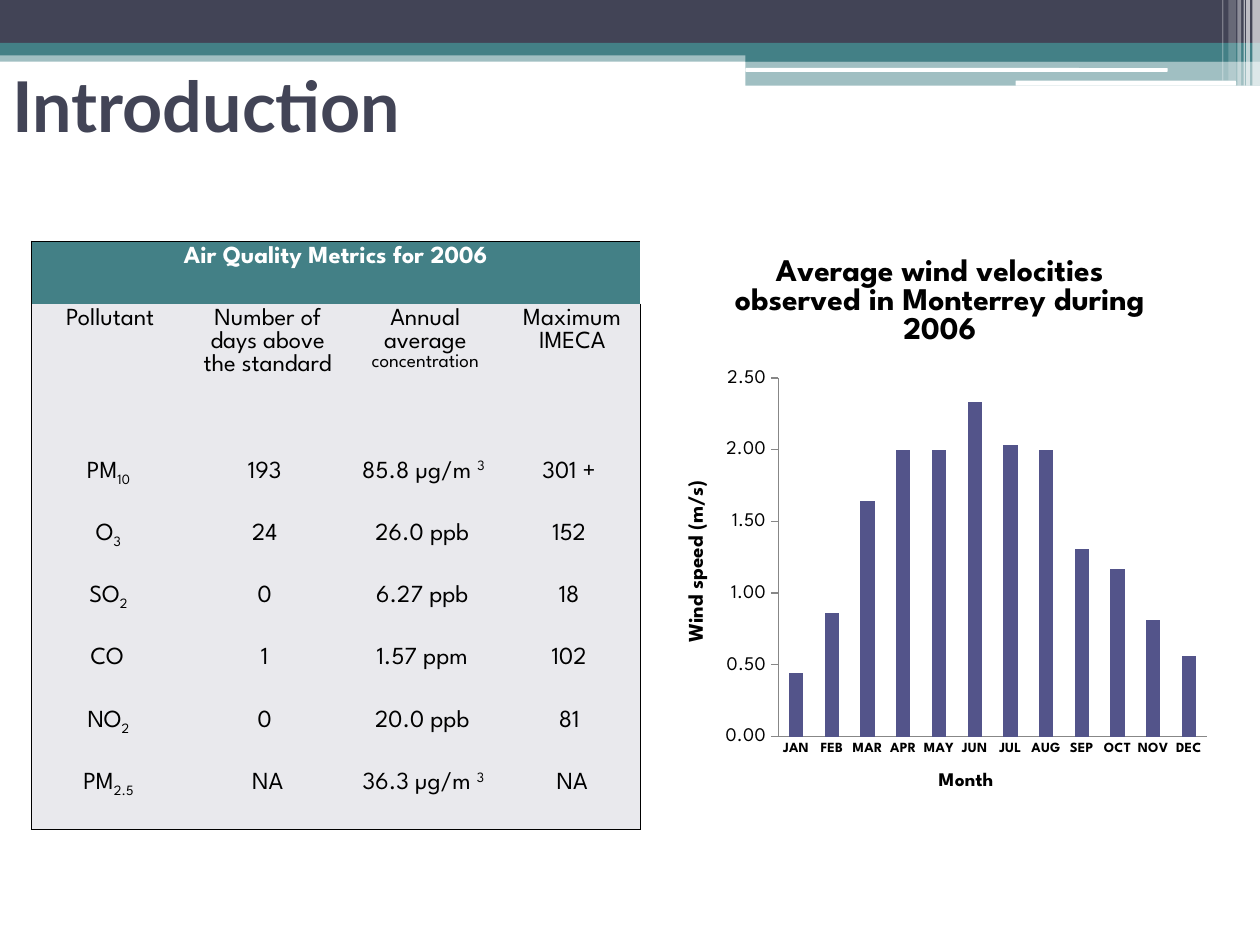
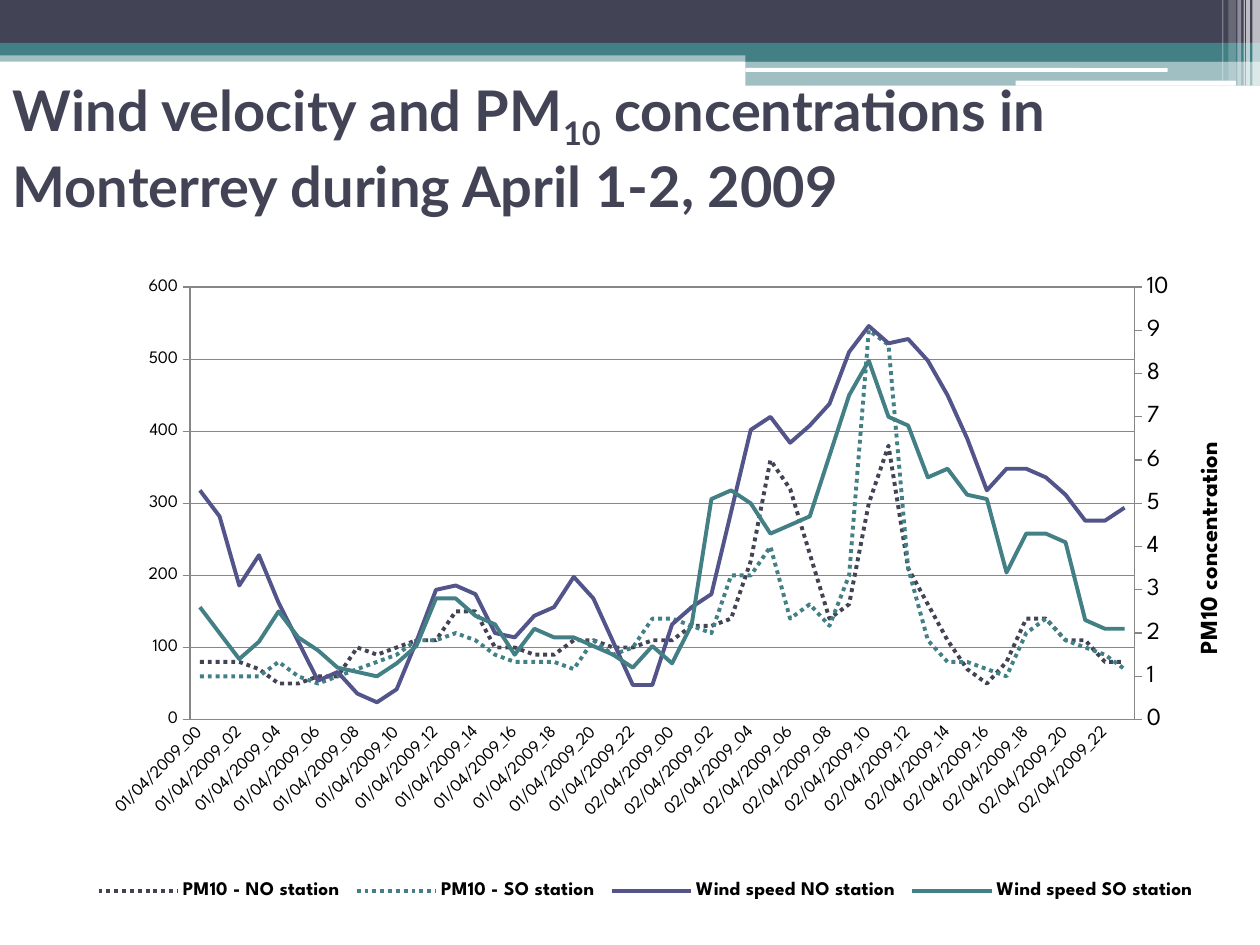
import copy
from typing import NamedTuple, Optional

import pptx
import pptx.chart.axis
import pptx.chart.data
import pptx.dml.color
import pptx.enum.chart
import pptx.enum.dml
import pptx.enum.shapes
import pptx.enum.text
import pptx.oxml
import pptx.oxml.ns
import pptx.util
from pptx.dml.color import RGBColor
from pptx.enum.chart import XL_TICK_MARK
from pptx.enum.shapes import MSO_SHAPE
from pptx.oxml.ns import qn
from pptx.util import Pt

SLATE = RGBColor(0x42, 0x44, 0x56)
TEAL = RGBColor(0x43, 0x80, 0x86)
INDIGO = RGBColor(0x53, 0x54, 0x8A)
MIST = RGBColor(0xE9, 0xE9, 0xED)
AXIS_GREY = RGBColor(0x87, 0x87, 0x87)
BLACK = RGBColor(0, 0, 0)
WHITE = RGBColor(0xFF, 0xFF, 0xFF)
TITLE_FONT = "Lato"
BODY_FONT = "League Spartan"

# The slide is a grid of 120 columns by 90 rows with square cells.
SLIDE_WIDTH = pptx.util.Inches(10)
SLIDE_HEIGHT = pptx.util.Inches(7.5)
COLUMNS = 120
NO_GRID_STYLE = "{2D5ABB26-0587-4C30-8999-92F81FD0307C}"


class Box(NamedTuple):
    left: float
    top: float
    width: float
    height: float


class Band(NamedTuple):
    box: Box
    color: RGBColor
    opacity: int = 100
    outline: MSO_SHAPE = MSO_SHAPE.RECTANGLE


class Piece(NamedTuple):
    text: str
    baseline: int = 0
    size: Optional[int] = None


class Trend(NamedTuple):
    name: str
    values: list[float]
    color: RGBColor
    dotted: bool


BANDS = [
    Band(Box(0, 4.8, 120, 1.08), TEAL, 50),
    Band(Box(0, 0, 120, 4.08), SLATE),
    Band(Box(0, 4.08, 120, 1.2), TEAL),
    Band(Box(71, 4.68, 49, 1.2), TEAL),
    Band(Box(71, 5.8, 49, 2.36), TEAL, 50),
    Band(Box(71, 6.48, 40.2, 0.36), WHITE, 100, MSO_SHAPE.ROUNDED_RECTANGLE),
    Band(Box(96.72, 7.68, 21, 0.48), WHITE, 100, MSO_SHAPE.ROUNDED_RECTANGLE),
    Band(Box(119.28, 0, 0.72, 8.16), WHITE, 65),
    Band(Box(118.68, 0, 0.36, 8.16), WHITE, 65),
    Band(Box(118.44, 0, 0.12, 8.16), WHITE, 60),
    Band(Box(117.84, 0, 0.36, 8.16), WHITE, 40),
    Band(Box(117, 0, 0.72, 7.68), WHITE, 20),
    Band(Box(116.4, 0, 0.12, 7.68), WHITE, 30),
]

METRICS_HEADING = "Air Quality Metrics for 2006"
METRICS = [
    [[Piece("Pollutant")], [Piece("Number of days above the standard")],
     [Piece("Annual average "), Piece("concentration", size=11)], [Piece("Maximum IMECA")]],
    [[Piece("PM"), Piece("10 ", -25)], [Piece("193 ")],
     [Piece("85.8 µg/m "), Piece("3 ", 30)], [Piece("301 + ")]],
    [[Piece("O"), Piece("3 ", -25)], [Piece("24 ")], [Piece("26.0 ppb ")], [Piece("152 ")]],
    [[Piece("SO"), Piece("2 ", -25)], [Piece("0 ")], [Piece("6.27 ppb ")], [Piece("18 ")]],
    [[Piece("CO ")], [Piece("1 ")], [Piece("1.57 ppm ")], [Piece("102 ")]],
    [[Piece("NO"), Piece("2 ", -25)], [Piece("0 ")], [Piece("20.0 ppb ")], [Piece("81 ")]],
    [[Piece("PM"), Piece("2.5 ", -25)], [Piece("NA")],
     [Piece("36.3 µg/m "), Piece("3 ", 30)], [Piece("NA")]],
]
METRIC_COLUMNS = [15, 15, 15, 13]
METRIC_ROWS = [5.93, 14.5] + [5.93] * 6

MONTHS = "JAN FEB MAR APR MAY JUN JUL AUG SEP OCT NOV DEC".split()
MONTHLY_WIND = [0.44, 0.86, 1.64, 2, 2, 2.33, 2.03, 2, 1.31, 1.17, 0.81, 0.56]

HOURS = [f"{day:02}/04/2009_{hour:02}" for day in (1, 2) for hour in range(24)]
TRENDS = [
    Trend("PM10 - NO station", [
        80, 80, 80, 70, 50, 50, 60, 60, 100, 90, 100, 110, 110, 150, 150, 100,
        100, 90, 90, 110, 110, 100, 100, 110, 110, 130, 130, 140, 220, 360, 320, 230,
        140, 160, 300, 380, 210, 160, 110, 70, 50, 80, 140, 140, 110, 110, 80, 80,
    ], SLATE, True),
    Trend("PM10 - SO station", [
        60, 60, 60, 60, 80, 60, 50, 60, 70, 80, 90, 110, 110, 120, 110, 90,
        80, 80, 80, 70, 110, 90, 100, 140, 140, 130, 120, 200, 200, 240, 140, 160,
        130, 200, 540, 520, 210, 110, 80, 80, 70, 60, 120, 140, 110, 100, 90, 70,
    ], TEAL, True),
    Trend("Wind speed NO station", [
        5.3, 4.7, 3.1, 3.8, 2.7, 1.8, 0.9, 1.1, 0.6, 0.4, 0.7, 1.8, 3, 3.1, 2.9, 2,
        1.9, 2.4, 2.6, 3.3, 2.8, 1.8, 0.8, 0.8, 2.2, 2.6, 2.9, 4.8, 6.7, 7, 6.4, 6.8,
        7.3, 8.5, 9.1, 8.7, 8.8, 8.3, 7.5, 6.5, 5.3, 5.8, 5.8, 5.6, 5.2, 4.6, 4.6, 4.9,
    ], INDIGO, False),
    Trend("Wind speed SO station", [
        2.6, 2, 1.4, 1.8, 2.5, 1.9, 1.6, 1.2, 1.1, 1, 1.3, 1.7, 2.8, 2.8, 2.4, 2.2,
        1.5, 2.1, 1.9, 1.9, 1.7, 1.5, 1.2, 1.7, 1.3, 2.2, 5.1, 5.3, 5, 4.3, 4.5, 4.7,
        6.1, 7.5, 8.3, 7, 6.8, 5.6, 5.8, 5.2, 5.1, 3.4, 4.3, 4.3, 4.1, 2.3, 2.1, 2.1,
    ], TEAL, False),
]


def grid(cells: float) -> int:
    return round(SLIDE_WIDTH * cells / COLUMNS)


def place(box: Box) -> list[int]:
    return [grid(cells) for cells in box]


def style_font(font, size: float, bold: bool = False, color: RGBColor = BLACK,
               face: str = BODY_FONT) -> None:
    font.name, font.size, font.bold = face, Pt(size), bold
    font.color.rgb = color


def write(paragraph, pieces: list[Piece], size: float, **style) -> None:
    for piece in pieces:
        run = paragraph.add_run()
        run.text = piece.text
        style_font(run.font, piece.size or size, **style)
        if piece.baseline:
            run._r.get_or_add_rPr().set("baseline", str(piece.baseline * 1000))


def add_bands(layout, slide) -> None:
    """Draw the bands on a slide, then move them behind the layout's placeholders."""
    for order, band in enumerate(BANDS):
        strip = slide.shapes.add_shape(band.outline, *place(band.box))
        strip.shadow.inherit = False
        strip.fill.solid()
        strip.fill.fore_color.rgb = band.color
        strip.line.fill.background()
        if band.opacity < 100:
            tint = strip.element.xpath("./p:spPr/a:solidFill/a:srgbClr")[0]
            alpha = pptx.oxml.parse_xml(f"<a:alpha {pptx.oxml.ns.nsdecls('a')}/>")
            alpha.set("val", str(band.opacity * 1000))
            tint.append(alpha)
        strip.element.nvSpPr.cNvPr.set("id", str(100 + order))
        layout.shapes.element.insert(2 + order, strip.element)


def set_title(slide, box: Box, pieces: list[Piece], size: float) -> None:
    title = slide.shapes.title
    title.left, title.top, title.width, title.height = place(box)
    frame = title.text_frame
    frame.word_wrap = True
    frame.auto_size = pptx.enum.text.MSO_AUTO_SIZE.NONE
    frame.vertical_anchor = pptx.enum.text.MSO_ANCHOR.MIDDLE
    frame.paragraphs[0].alignment = pptx.enum.text.PP_ALIGN.LEFT
    write(frame.paragraphs[0], pieces, size, bold=True, color=SLATE, face=TITLE_FONT)


def fill_cell(cell, pieces: list[Piece], heading: bool, edges: list[str]) -> None:
    """Write a cell and rule its outer edges, named L, R, T and B in that order."""
    cell.margin_left = cell.margin_right = grid(0.84)
    cell.margin_top = cell.margin_bottom = grid(0.48)
    properties = cell._tc.get_or_add_tcPr()
    for edge in edges:
        properties.append(pptx.oxml.parse_xml(
            f'<a:ln{edge} {pptx.oxml.ns.nsdecls("a")} w="12700"><a:solidFill>'
            f'<a:srgbClr val="{BLACK}"/></a:solidFill></a:ln{edge}>'))
    cell.fill.solid()
    cell.fill.fore_color.rgb = TEAL if heading else MIST
    paragraph = cell.text_frame.paragraphs[0]
    paragraph.alignment = pptx.enum.text.PP_ALIGN.CENTER
    write(paragraph, pieces, 14, bold=heading, color=WHITE if heading else BLACK)


def add_metrics_table(slide, box: Box) -> None:
    last_row, last_column = len(METRIC_ROWS) - 1, len(METRIC_COLUMNS) - 1
    frame = slide.shapes.add_table(last_row + 1, last_column + 1, *place(box))
    frame.element.xpath(".//a:tableStyleId")[0].text = NO_GRID_STYLE
    table = frame.table
    table.first_row = table.horz_banding = False
    for column, width in zip(table.columns, METRIC_COLUMNS):
        column.width = grid(width)
    for row, height in zip(table.rows, METRIC_ROWS):
        row.height = grid(height)
    table.cell(0, 0).merge(table.cell(0, last_column))
    heading_row = [[Piece(METRICS_HEADING)]] + [[]] * last_column
    for row, contents in enumerate([heading_row] + METRICS):
        for column, pieces in enumerate(contents):
            sides = {"L": column == 0, "R": column == last_column,
                     "T": row == 0, "B": row == last_row}
            fill_cell(table.cell(row, column), pieces, row == 0,
                      [side for side, outer in sides.items() if outer])


def style_axis(axis, size: float, ticks=XL_TICK_MARK.NONE, bold: bool = False) -> None:
    axis.has_major_gridlines = False
    axis.major_tick_mark = ticks
    axis.minor_tick_mark = XL_TICK_MARK.NONE
    axis.format.line.color.rgb = AXIS_GREY
    axis.format.line.width = Pt(0.75)
    style_font(axis.tick_labels.font, size, bold)


def set_scale(axis, top: float, step: float) -> None:
    axis.minimum_scale, axis.maximum_scale, axis.major_unit = 0, top, step


def title_axis(axis, text: str, size: float, upright: bool = False) -> None:
    axis.has_title = True
    heading = axis.axis_title
    write(heading.text_frame.paragraphs[0], [Piece(text)], size, bold=True)
    if upright:
        body = heading.element.xpath(".//a:bodyPr")[0]
        body.set("rot", "-5400000")
        body.set("vert", "horz")


def manual_layout(shares: Box, target: str = "") -> object:
    """Return a chart layout given as shares of the chart's own size."""
    inner = f'<c:layoutTarget val="{target}"/>' if target else ""
    sizes = "".join(f'<c:{key} val="{share}"/>' for key, share in zip("xywh", shares))
    return pptx.oxml.parse_xml(
        f'<c:layout {pptx.oxml.ns.nsdecls("c")}><c:manualLayout>{inner}'
        f'<c:xMode val="edge"/><c:yMode val="edge"/>{sizes}</c:manualLayout></c:layout>')


def add_chart(slide, kind, box: Box, plot: Box, categories: list[str],
              series: list[tuple[str, list[float]]]):
    data = pptx.chart.data.CategoryChartData()
    data.categories = categories
    for name, values in series:
        data.add_series(name, values)
    chart = slide.shapes.add_chart(kind, *place(box), data).chart
    style_font(chart.font, 10)
    chart.has_legend = False
    area = chart.element.xpath(".//c:plotArea")[0]
    for automatic in area.findall(qn("c:layout")):
        area.remove(automatic)
    area.insert(0, manual_layout(plot, "inner"))
    return chart


def add_monthly_wind(slide) -> None:
    chart = add_chart(slide, pptx.enum.chart.XL_CHART_TYPE.COLUMN_CLUSTERED,
                      Box(63, 22, 53, 56), Box(0.21, 0.25, 0.77, 0.61),
                      MONTHS, [("Series 1", MONTHLY_WIND)])
    chart.has_title = True
    write(chart.chart_title.text_frame.paragraphs[0],
          [Piece("Average wind velocities observed in Monterrey during 2006")], 18, bold=True)
    plot = chart.plots[0]
    plot.gap_width, plot.vary_by_categories = 150, False
    columns = plot.series[0].format.fill
    columns.solid()
    columns.fore_color.rgb = INDIGO
    style_axis(chart.category_axis, 8, bold=True)
    title_axis(chart.category_axis, "Month", 11)
    speed = chart.value_axis
    style_axis(speed, 11, XL_TICK_MARK.OUTSIDE)
    set_scale(speed, 2.5, 0.5)
    speed.tick_labels.number_format = "0.00"
    speed.tick_labels.number_format_is_linked = False
    title_axis(speed, "Wind speed (m/s)", 12, upright=True)


def split_to_right_axis(chart, first_right: int):
    """Move the series from first_right on to a second value axis and return it."""
    left = chart.element.xpath(".//c:lineChart")[0]
    right = copy.deepcopy(left)
    for order, (kept, moved) in enumerate(zip(left.findall(qn("c:ser")),
                                              right.findall(qn("c:ser")))):
        if order < first_right:
            right.remove(moved)
        else:
            left.remove(kept)
    left.addnext(right)
    hours, levels = (chart.element.xpath(f".//c:{tag}")[0] for tag in ("catAx", "valAx"))
    right_hours, right_levels = copy.deepcopy(hours), copy.deepcopy(levels)
    levels.addnext(right_levels)
    right_levels.addnext(right_hours)
    for reference, number in zip(right.findall(qn("c:axId")), ("5001", "5002")):
        reference.set("val", number)
    for axis, own, other in ((right_hours, "5001", "5002"), (right_levels, "5002", "5001")):
        axis.find(qn("c:axId")).set("val", own)
        axis.find(qn("c:crossAx")).set("val", other)
    right_levels.find(qn("c:axPos")).set("val", "r")
    right_levels.find(qn("c:crosses")).set("val", "max")
    pptx.chart.axis.CategoryAxis(right_hours).visible = False
    for axis in (levels, right_levels):
        if axis.find(qn("c:crossBetween")) is None:
            axis.find(qn("c:crosses")).addnext(pptx.oxml.parse_xml(
                f'<c:crossBetween {pptx.oxml.ns.nsdecls("c")} val="between"/>'))
    return pptx.chart.axis.ValueAxis(right_levels)


def add_hourly_trends(slide) -> None:
    chart = add_chart(slide, pptx.enum.chart.XL_CHART_TYPE.LINE,
                      Box(5, 21, 113, 69), Box(0.116, 0.092, 0.796, 0.597), HOURS,
                      [(trend.name, trend.values) for trend in TRENDS])
    chart.has_title = False
    wind = split_to_right_axis(chart, first_right=2)
    lines = [line for plot in chart.plots for line in plot.series]
    for line, trend in zip(lines, TRENDS):
        line.smooth = False
        line.marker.style = pptx.enum.chart.XL_MARKER_STYLE.NONE
        line.format.line.color.rgb = trend.color
        line.format.line.width = Pt(2.25)
        if trend.dotted:
            line.format.line.dash_style = pptx.enum.dml.MSO_LINE.ROUND_DOT
    style_axis(chart.category_axis, 10)
    hours = chart.element.xpath(".//c:catAx")[0]
    hours.xpath("./c:txPr/a:bodyPr")[0].set("rot", "-2700000")
    skip = pptx.oxml.parse_xml(f'<c:tickLblSkip {pptx.oxml.ns.nsdecls("c")} val="2"/>')
    hours.find(qn("c:noMultiLvlLbl")).addprevious(skip)
    style_axis(chart.value_axis, 12)
    set_scale(chart.value_axis, 600, 100)
    title_axis(chart.value_axis, "PM10 concentration", 14, upright=True)
    style_axis(wind, 14, XL_TICK_MARK.OUTSIDE)
    set_scale(wind, 10, 1)
    chart.has_legend = True
    chart.legend.position = pptx.enum.chart.XL_LEGEND_POSITION.BOTTOM
    chart.legend.include_in_layout = False
    style_font(chart.legend.font, 11, bold=True)
    legend = chart.element.xpath(".//c:legend")[0]
    for automatic in legend.findall(qn("c:layout")):
        legend.remove(automatic)
    legend.find(qn("c:legendPos")).addnext(manual_layout(Box(0.03, 0.9, 0.94, 0.05)))


def main() -> None:
    deck = pptx.Presentation()
    deck.slide_width, deck.slide_height = SLIDE_WIDTH, SLIDE_HEIGHT
    layout = deck.slide_layouts.get_by_name("Title Only")
    introduction = deck.slides.add_slide(layout)
    add_bands(layout, introduction)
    set_title(introduction, Box(0, 3, 108, 14), [Piece("Introduction")], 40)
    add_metrics_table(introduction, Box(3, 23, 58, 56))
    add_monthly_wind(introduction)

    hourly = deck.slides.add_slide(layout)
    set_title(hourly, Box(0, 7, 116, 14), [
        Piece("Wind velocity and PM"), Piece("10", -25),
        Piece(" concentrations in Monterrey during April 1-2, 2009")], 32)
    add_hourly_trends(hourly)
    deck.save("out.pptx")


if __name__ == "__main__":
    main()
